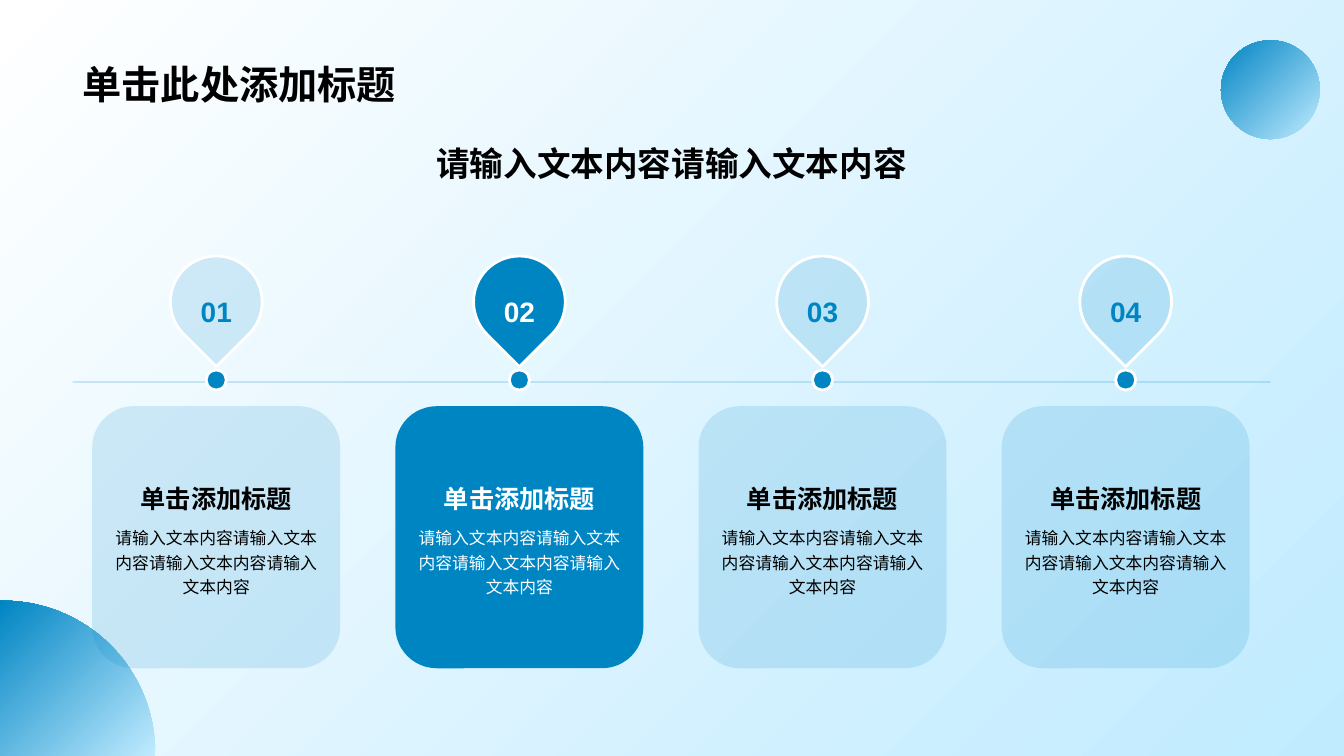
from math import cos, radians, sin, sqrt, tan

from lxml import etree
from pptx import Presentation
from pptx.dml.color import RGBColor
from pptx.enum.shapes import MSO_CONNECTOR, MSO_SHAPE
from pptx.enum.text import MSO_ANCHOR, MSO_AUTO_SIZE, PP_ALIGN
from pptx.oxml.ns import qn
from pptx.util import Inches, Pt

COLORS = {"blue": "0085C3", "sky": "C0EBFF", "white": "FFFFFF", "black": "000000"}
FONT = "Arial"
OVAL, ROUNDED = MSO_SHAPE.OVAL, MSO_SHAPE.ROUNDED_RECTANGLE
STRAIGHT = MSO_CONNECTOR.STRAIGHT
LEFT, CENTER = PP_ALIGN.LEFT, PP_ALIGN.CENTER
TOP, MIDDLE, BOTTOM = MSO_ANCHOR.TOP, MSO_ANCHOR.MIDDLE, MSO_ANCHOR.BOTTOM
NO_FIT = MSO_AUTO_SIZE.NONE

PHRASE = "请输入文本内容"
NUMBERS = ["01", "02", "03", "04"]
ACTIVE = "02"
PIN_LEFT, PIN_TOP, PIN_RADIUS = 1.69, 2.54, 0.91 / 2
PITCH = 9.02 / 3
CARD_WIDTH, TEXT_WIDTH, DOT = 2.46, 2.21, 0.2


def rgb(name):
    return RGBColor.from_string(COLORS[name])


def set_alpha(fill_parent, percent):
    color = next(fill_parent.iter(qn("a:srgbClr")))
    etree.SubElement(color, qn("a:alpha"), val=str(percent * 1000))


def set_gradient(fill, start, end):
    fill.gradient()
    fill.gradient_angle = 135
    for stop, name in zip(fill.gradient_stops, (start, end)):
        stop.color.rgb = rgb(name)


def set_solid(shape, alpha=None, outlined=False):
    shape.shadow.inherit = False
    shape.fill.solid()
    shape.fill.fore_color.rgb = rgb("blue")
    if alpha:
        set_alpha(shape._element.spPr, alpha)
    if outlined:
        shape.line.color.rgb = rgb("white")
        shape.line.width = Pt(2)
    else:
        shape.line.fill.background()


def set_text(shape, text, size, color, bold=True, align=CENTER, anchor=BOTTOM, spacing=None):
    tf = shape.text_frame
    tf.word_wrap = True
    tf.auto_size = NO_FIT
    tf.vertical_anchor = anchor
    p = tf.paragraphs[0]
    p.text = text
    p.alignment = align
    if spacing:
        p.line_spacing = spacing
    p.font.name = FONT
    p.font.size = Pt(size)
    p.font.bold = bold
    p.font.color.rgb = rgb(color)


def add_text(s, x, y, w, h, text, size, color, **options):
    box = s.shapes.add_textbox(Inches(x), Inches(y), Inches(w), Inches(h))
    set_text(box, text, size, color, **options)


def arc(cx, cy, radius, start, end):
    a, b = radians(start), radians(end)
    k = 4 / 3 * tan((b - a) / 4)
    return [(cx + radius * (cos(a) - k * sin(a)), cy + radius * (sin(a) + k * cos(a))),
            (cx + radius * (cos(b) + k * sin(b)), cy + radius * (sin(b) - k * cos(b))),
            (cx + radius * cos(b), cy + radius * sin(b))]


def add_outline(s, start, segments):
    points = [(Inches(x), Inches(y)) for segment in segments for x, y in segment]
    builder = s.shapes.build_freeform(Inches(start[0]), Inches(start[1]))
    builder.add_line_segments(points, close=True)
    shape = builder.convert_to_shape()
    lines = iter(list(shape._element.iter(qn("a:lnTo"))))
    for segment in segments:
        first, *others = [next(lines) for _ in segment]
        if others:
            first.addprevious(curve := etree.Element(qn("a:cubicBezTo")))
            for line in (first, *others):
                curve.append(line[0])
                line.getparent().remove(line)
    return shape


def add_decor(s):
    corner = add_outline(s, (0, 7.5), [[(0, 5.96)], [(0.03, 5.96)], arc(0.03, 7.47, 1.51, -90, 0),
                                       [(1.54, 7.5)]])
    ball = s.shapes.add_shape(OVAL, Inches(12.11), Inches(0.4), Inches(0.98), Inches(0.98))
    for shape in (corner, ball):
        shape.shadow.inherit = False
        set_gradient(shape.fill, "sky", "blue")
        shape.line.fill.background()


def add_timeline(s):
    line = s.shapes.add_connector(STRAIGHT, Inches(12.6), Inches(3.79), Inches(0.72), Inches(3.79))
    line.line.color.rgb = rgb("blue")
    line.line.width = Pt(0.5)
    set_alpha(line._element.spPr, 50)
    etree.SubElement(line._element.spPr, qn("a:effectLst"))


def add_pin(s, cx):
    cy = PIN_TOP + PIN_RADIUS
    angles = [-90, 0, 45]
    right = [arc(cx, cy, PIN_RADIUS, a, b) for a, b in zip(angles, angles[1:])]
    tip = (cx, cy + PIN_RADIUS * sqrt(2))
    shoulder = (cx - PIN_RADIUS / sqrt(2), cy + PIN_RADIUS / sqrt(2))
    left = [arc(cx, cy, PIN_RADIUS, 135, 180), arc(cx, cy, PIN_RADIUS, 180, 270)]
    return add_outline(s, (cx, PIN_TOP), [*right, [tip], [shoulder], *left])


def add_step(s, cx, number):
    active = number == ACTIVE
    alpha = None if active else 15
    text_color = "white" if active else "black"

    card = s.shapes.add_shape(ROUNDED, Inches(cx - CARD_WIDTH / 2), Inches(4.03),
                              Inches(CARD_WIDTH), Inches(2.6))
    set_solid(card, alpha)
    dot = s.shapes.add_shape(OVAL, Inches(cx - DOT / 2), Inches(3.67), Inches(DOT), Inches(DOT))
    set_solid(dot, outlined=True)

    text_x = cx - TEXT_WIDTH / 2
    add_text(s, text_x, 4.35, TEXT_WIDTH, 0.79, "单击添加标题", 18, text_color)
    add_text(s, text_x, 5.15, TEXT_WIDTH, 1.3, PHRASE * 4, 12, text_color,
             bold=False, anchor=TOP, spacing=1.2)

    pin = add_pin(s, cx)
    set_solid(pin, alpha, outlined=True)
    set_text(pin, number, 20, "white" if active else "blue", anchor=MIDDLE)


def main():
    prs = Presentation()
    prs.slide_width, prs.slide_height = Inches(13.33), Inches(7.5)
    s = prs.slides.add_slide(prs.slide_layouts[5])
    set_gradient(s.background.fill, "sky", "white")

    title = s.shapes.title
    title.left, title.top = Inches(0.72), Inches(0.14)
    title.width, title.height = Inches(11.88), Inches(0.98)
    set_text(title, "单击此处添加标题", 28, "black", align=LEFT)

    add_decor(s)
    add_timeline(s)
    add_text(s, 0.72, 1.26, 11.88, 0.61, PHRASE * 2, 24, "black")
    for i, number in enumerate(NUMBERS):
        add_step(s, PIN_LEFT + PIN_RADIUS + i * PITCH, number)
    prs.save("out.pptx")


if __name__ == "__main__":
    main()
